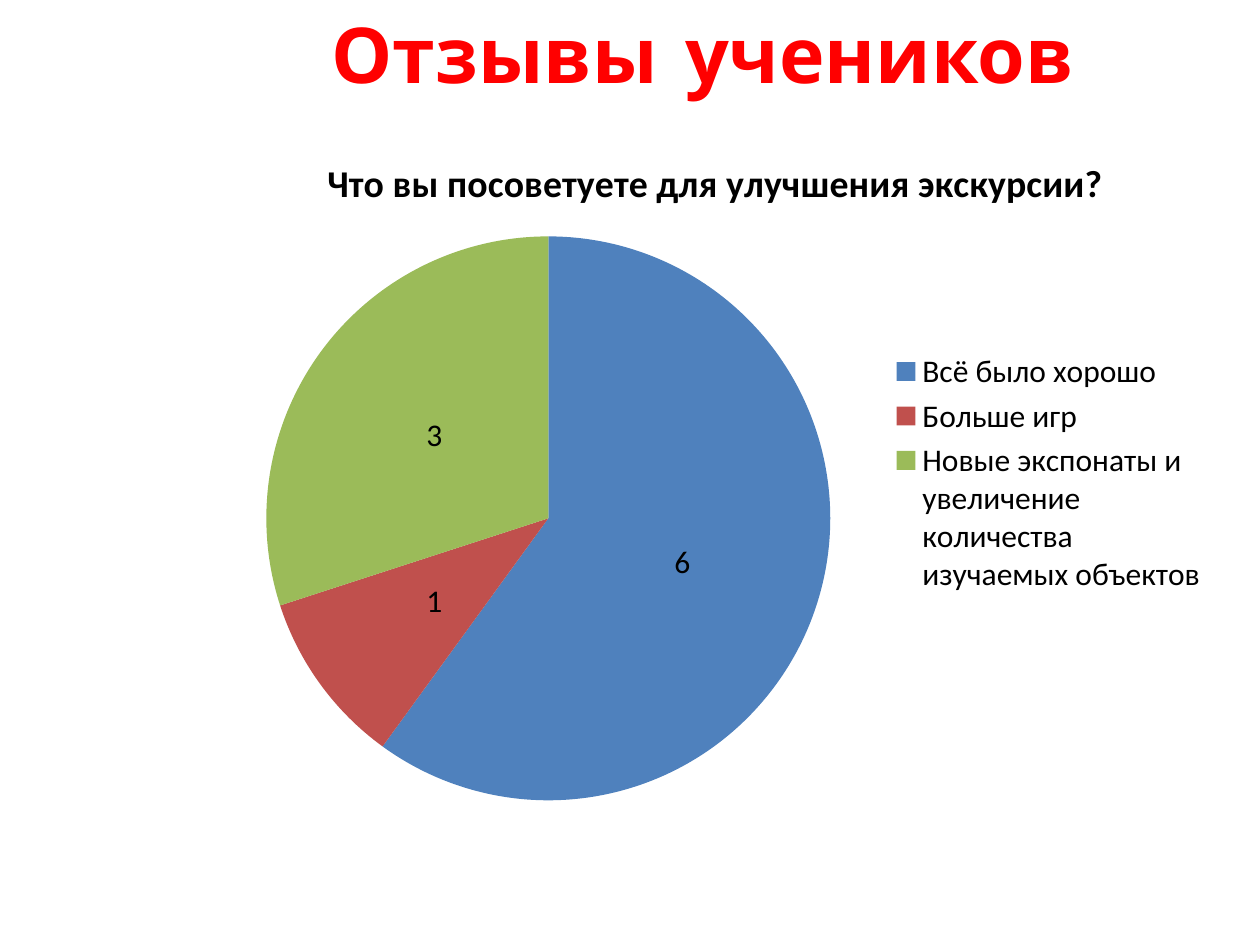
from dataclasses import dataclass

from lxml import etree
from pptx import Presentation
from pptx.chart.data import CategoryChartData
from pptx.dml.color import RGBColor
from pptx.enum.chart import XL_CHART_TYPE, XL_LABEL_POSITION, XL_LEGEND_POSITION
from pptx.enum.text import MSO_ANCHOR, PP_ALIGN
from pptx.oxml.ns import qn
from pptx.slide import Slide
from pptx.util import Inches, Pt

PIE = XL_CHART_TYPE.PIE
LABEL_CENTER = XL_LABEL_POSITION.CENTER
LEGEND_RIGHT = XL_LEGEND_POSITION.RIGHT
TOP = MSO_ANCHOR.TOP
CENTER = PP_ALIGN.CENTER

QUESTION = "Что вы посоветуете для улучшения экскурсии?"
ANSWERS = [
    ("Всё было хорошо", 6, "4F81BD"),
    ("Больше игр", 1, "C0504D"),
    ("Новые экспонаты и увеличение количества изучаемых объектов", 3, "9BBB59"),
]


def color(hex_value):
    """Return the RGB colour for a hex string."""
    return RGBColor.from_string(hex_value)


@dataclass
class SlideBuilder:
    """Hold the slide and its style, and add each kind of element."""

    slide: Slide
    heading_font: str = "Comic Neue"
    heading_color: str = "FF0000"
    outline_color: str = "002060"
    chart_font: str = "Calibri"
    chart_color: str = "000000"

    def background(self, hex_value):
        """Fill the slide background."""
        fill = self.slide.background.fill
        fill.solid()
        fill.fore_color.rgb = color(hex_value)

    def heading(self, text, left, top, width, height):
        """Add the centred, outlined heading."""
        box = self.slide.shapes.add_textbox(
            Inches(left), Inches(top), Inches(width), Inches(height))
        frame = box.text_frame
        frame.word_wrap = True
        frame.vertical_anchor = TOP
        paragraph = frame.paragraphs[0]
        paragraph.alignment = CENTER
        run = paragraph.add_run()
        run.text = text
        font = run.font
        font.name = self.heading_font
        font.size = Pt(44)
        font.bold = True
        font.color.rgb = color(self.heading_color)
        outline = etree.Element(qn("a:ln"), w=str(Pt(1)))
        fill = etree.SubElement(outline, qn("a:solidFill"))
        etree.SubElement(fill, qn("a:srgbClr"), val=self.outline_color)
        run.font._element.insert(0, outline)

    def style_chart_font(self, font, size, bold=False):
        """Apply the chart typeface and colour."""
        font.name = self.chart_font
        font.size = Pt(size)
        font.bold = bold
        font.color.rgb = color(self.chart_color)

    def pie(self, question, answers, left, top, width, height):
        """Add a titled pie chart with values and a legend."""
        data = CategoryChartData()
        data.categories = [answer for answer, _, _ in answers]
        data.add_series(question, [votes for _, votes, _ in answers])
        chart = self.slide.shapes.add_chart(
            PIE, Inches(left), Inches(top), Inches(width), Inches(height), data).chart
        self.style_chart_font(chart.font, 18)

        chart.has_title = True
        title_run = chart.chart_title.text_frame.paragraphs[0].add_run()
        title_run.text = question
        self.style_chart_font(title_run.font, 21.6, bold=True)
        chart.chart_title.include_in_layout = False

        chart.has_legend = True
        chart.legend.position = LEGEND_RIGHT
        chart.legend.include_in_layout = False

        plot = chart.plots[0]
        plot.vary_by_categories = True
        plot.has_data_labels = True
        labels = plot.data_labels
        labels.show_value = True
        labels.show_percentage = False
        labels.position = LABEL_CENTER
        self.style_chart_font(labels.font, 18)
        for index, (_, _, slice_color) in enumerate(answers):
            fill = plot.series[0].points[index].format.fill
            fill.solid()
            fill.fore_color.rgb = color(slice_color)


def main():
    """Build and save the feedback slide."""
    presentation = Presentation()
    presentation.slide_width = Inches(10)
    presentation.slide_height = Inches(7.5)
    builder = SlideBuilder(presentation.slides.add_slide(presentation.slide_layouts[6]))
    builder.background("FFFFFF")
    builder.heading("Отзывы учеников", 1.08, 0, 9, 1.25)
    builder.pie(QUESTION, ANSWERS, 1.67, 1.02, 8.02, 5.47)
    presentation.save("out.pptx")


if __name__ == "__main__":
    main()
